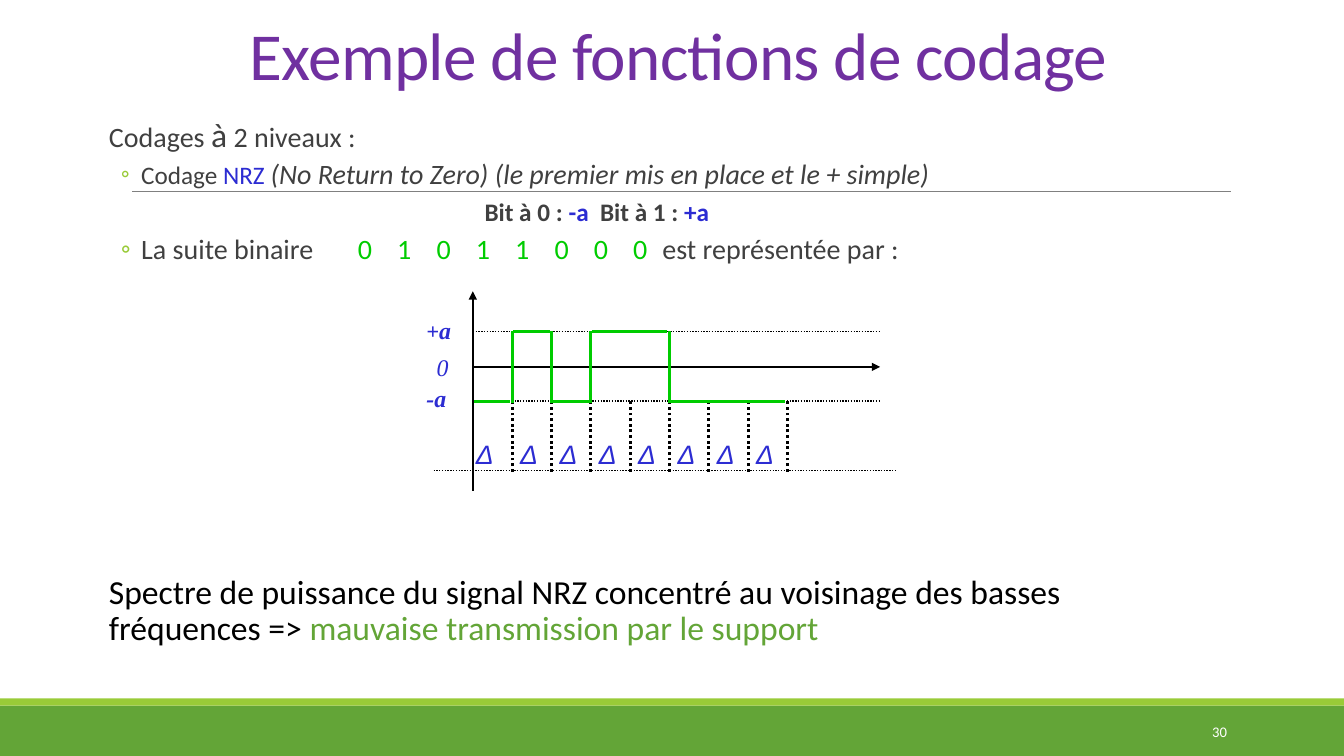
import itertools
import pptx
import pptx.util
import pptx.dml.color
import pptx.enum.dml
import pptx.enum.shapes
import pptx.enum.text
import pptx.oxml
import pptx.oxml.ns
from pptx.util import Inches

# Content
TITLE = "Exemple de fonctions de codage"
PAGE_NUMBER = "30"
GREY, BLUE, GREEN, LEAF, BLACK = "404040", "2C2CD2", "00CC00", "63A537", "000000"
BITS = [0, 1, 0, 1, 1, 0, 0, 0]
# Each span: text, size, colour, style (b bold, i italic)
INTRO = [
    ("plain", [("Codages ", 20, GREY, ""), ("à", 24, GREY, ""), (" 2 niveaux :", 20, GREY, "")]),
    ("bullet", [("Codage ", 18, GREY, ""), ("NRZ ", 18, BLUE, ""),
                ("(No Return to Zero) (le premier mis en place et le + simple)", 20, GREY, "i")]),
    ("center", [("Bit à 0 : ", 18, GREY, "b"), ("-a", 18, BLUE, "b"),
                ("  Bit à 1 : ", 18, GREY, "b"), ("+a", 18, BLUE, "b")]),
    ("bullet", [("La suite binaire", 20, GREY, "")]),
]
SEQUENCE = [("\t".join(str(bit) for bit in BITS), 20, GREEN, ""),
            ("\test représentée par :", 20, GREY, "")]
CONCLUSION = [("Spectre de puissance du signal NRZ concentré au voisinage des basses fréquences => ",
               24, BLACK, ""), ("mauvaise transmission par le support", 24, LEAF, "")]
LEVEL_LABELS = [  # left, top, width, spans
    (4.2, 3.78, 0.45, [("-a", 17, BLUE, "bi")]),
    (4.2, 3.1, 0.45, [("+", 16, BLUE, "bi"), ("a", 17, BLUE, "bi")]),
    (4.3, 3.47, 0.35, [("0", 17, BLUE, "i")]),
]

# Chart geometry
SLOT, AXIS_X, AXIS_END = 0.39, 4.69, 8.73
HIGH, ZERO, LOW, BASE = 3.29, 3.64, 3.98, 4.67

deck = pptx.Presentation()
deck.slide_width, deck.slide_height = Inches(13.33), Inches(7.5)
page = deck.slides.add_slide(deck.slide_layouts[6])
Align = pptx.enum.text.PP_ALIGN
Anchor = pptx.enum.text.MSO_ANCHOR


def paint(color_format, value):
    color_format.rgb = pptx.dml.color.RGBColor.from_string(value)


def add_child(parent, tag, **attributes):
    child = pptx.oxml.parse_xml(f"<a:{tag} {pptx.oxml.ns.nsdecls('a')}/>")
    for name, value in attributes.items():
        child.set(name, str(value))
    parent.append(child)
    return child


def add_band(top, height, color):
    band = page.shapes.add_shape(pptx.enum.shapes.MSO_SHAPE.RECTANGLE, 0, Inches(top),
                                 deck.slide_width, Inches(height))
    band.shadow.inherit = False
    band.fill.solid()
    paint(band.fill.fore_color, color)
    band.line.fill.background()


def add_line(x1, y1, x2, y2, color=BLACK, width=1, dotted=False, arrow=False):
    line = page.shapes.add_connector(pptx.enum.shapes.MSO_CONNECTOR.STRAIGHT,
                                     Inches(x1), Inches(y1), Inches(x2), Inches(y2))
    paint(line.line.color, color)
    line.line.width = pptx.util.Pt(width)
    if dotted:
        line.line.dash_style = pptx.enum.dml.MSO_LINE.ROUND_DOT
    if arrow:
        add_child(line.line._get_or_add_ln(), "tailEnd", type="triangle")
    add_child(line._element.spPr, "effectLst")


def add_box(left, top, width, height, inset=(0.09, 0.05), anchor=Anchor.TOP):
    box = page.shapes.add_textbox(Inches(left), Inches(top), Inches(width), Inches(height))
    frame = box.text_frame
    frame.word_wrap = True
    frame.vertical_anchor = anchor
    frame.margin_left = frame.margin_right = Inches(inset[0])
    frame.margin_top = frame.margin_bottom = Inches(inset[1])
    return frame


def write(para, spans, font="Calibri", align=Align.LEFT, spacing=None):
    para.alignment = align
    para.line_spacing = spacing
    for text, size, color, style in spans:
        span = para.add_run()
        span.text = text
        span.font.name, span.font.size = font, pptx.util.Pt(size)
        span.font.bold, span.font.italic = "b" in style, "i" in style
        paint(span.font.color, color)


def add_label(left, top, width, height, spans, font):
    frame = add_box(left, top, width, height, (0.03, 0.03))
    write(frame.paragraphs[0], spans, font)


# Background bands and rule
add_band(7, 0.5, LEAF)
add_band(6.93, 0.07, "99CB38")
add_line(1.31, 1.9, 12.21, 1.9, "808080", 0.5)

# Title and page number
title = add_box(1.72, 0.05, 10.02, 1.09, anchor=Anchor.MIDDLE).paragraphs[0]
write(title, [(TITLE, 48, "7030A0", "")], align=Align.CENTER, spacing=0.85)
title.runs[0].font._element.set("spc", "-50")
number = add_box(10.83, 7.06, 1.43, 0.4, anchor=Anchor.MIDDLE).paragraphs[0]
write(number, [(PAGE_NUMBER, 10.5, "FFFFFF", "")], align=Align.RIGHT)

# Introduction
intro = add_box(0.89, 1.13, 9.84, 1.65)
for index, (kind, spans) in enumerate(INTRO):
    para = intro.paragraphs[0] if index == 0 else intro.add_paragraph()
    write(para, spans, align=Align.CENTER if kind == "center" else Align.LEFT, spacing=0.9)
    plain = kind == "plain"
    para.space_before = pptx.util.Pt(12 if plain else 2)
    para.space_after = pptx.util.Pt(2 if plain else 4)
    properties = para._p.get_or_add_pPr()
    properties.set("marL", str(Inches(0.1 if plain else 0.42)))
    properties.set("indent", str(Inches(0 if plain else -0.2)))
    if kind == "bullet":
        add_child(add_child(properties, "buClr"), "srgbClr", val="99CB38")
        add_child(properties, "buFont", typeface="Calibri")
        add_child(properties, "buChar", char="◦")
    else:
        add_child(properties, "buNone")

# Bit sequence, one tab stop per bit
sequence = add_box(3.55, 2.33, 6, 0.33, (0, 0)).paragraphs[0]
write(sequence, SEQUENCE, spacing=0.9)
stops = add_child(sequence._p.get_or_add_pPr(), "tabLst")
for position in [SLOT * slot for slot in range(1, len(BITS))] + [3.02]:
    add_child(stops, "tab", pos=Inches(position), algn="l")

# Conclusion
conclusion = add_box(0.99, 5.66, 9.74, 0.9).paragraphs[0]
write(conclusion, CONCLUSION, spacing=0.9)

# Axes and level guides
add_line(AXIS_X, 4.87, AXIS_X, 2.89, arrow=True)
add_line(AXIS_X, ZERO, AXIS_END, ZERO, arrow=True)
for level in (LOW, HIGH):
    add_line(AXIS_X, level, AXIS_END, level, dotted=True)
add_line(4.3, BASE, 8.89, BASE, dotted=True)

# Time slots
for slot in range(len(BITS)):
    left = AXIS_X + SLOT * slot
    add_line(left + SLOT, BASE + 0.01, left + SLOT, LOW - 0.01, width=2, dotted=True)
    add_label(left + (0.05 if slot else 0), 4.31, 0.22, 0.38, [("Δ", 19, BLUE, "i")], "Arial")

# NRZ signal: one level per run of equal bits, one edge between runs
start = 0
for bit, group in itertools.groupby(BITS):
    end = start + len(list(group))
    x1, x2 = AXIS_X + SLOT * start, AXIS_X + SLOT * end
    level = HIGH if bit else LOW
    add_line(x1 + 0.01, level, x2 - 0.02, level, GREEN, 2)
    if start:
        add_line(x1, 4, x1, 3.28, GREEN, 2)
    start = end

# Level names
for left, top, width, spans in LEVEL_LABELS:
    add_label(left, top, width, 0.35, spans, "Times New Roman")

deck.save("out.pptx")
